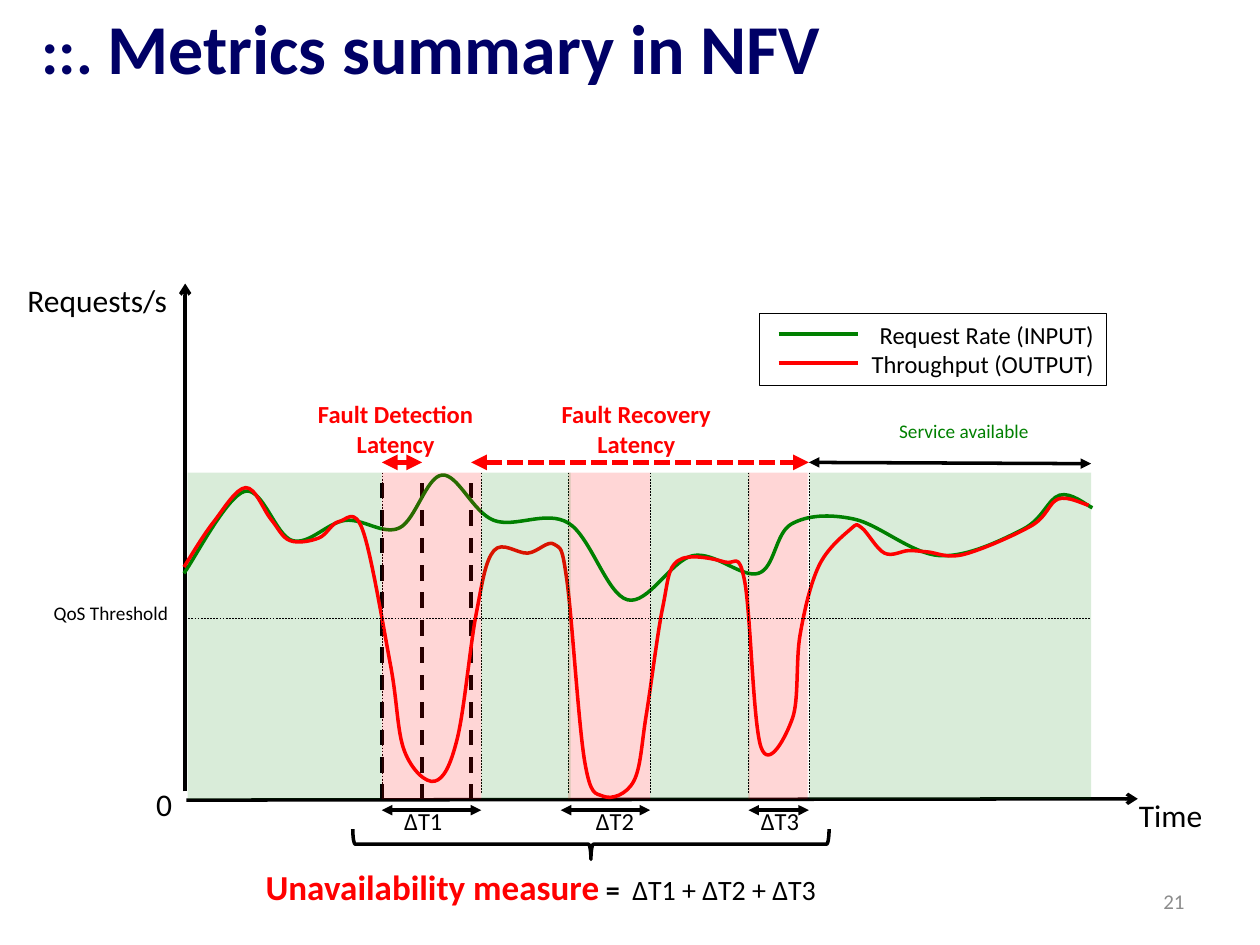
from dataclasses import dataclass
from typing import Optional

from lxml import etree
from pptx import Presentation
from pptx.dml.color import RGBColor
from pptx.enum.dml import MSO_LINE
from pptx.enum.shapes import MSO_CONNECTOR, MSO_SHAPE
from pptx.enum.text import MSO_ANCHOR, MSO_AUTO_SIZE, PP_ALIGN
from pptx.oxml.ns import qn
from pptx.util import Inches, Pt

BLACK = RGBColor(0x00, 0x00, 0x00)
RED = RGBColor(0xFF, 0x00, 0x00)
GREEN = RGBColor(0x00, 0x80, 0x00)
NAVY = RGBColor(0x00, 0x00, 0x66)
GREY = RGBColor(0x8C, 0x8C, 0x8C)
LEFT, MID, RIGHT = PP_ALIGN.LEFT, PP_ALIGN.CENTER, PP_ALIGN.RIGHT
TOP, CENTRE = MSO_ANCHOR.TOP, MSO_ANCHOR.MIDDLE
FIT, FIXED = MSO_AUTO_SIZE.SHAPE_TO_FIT_TEXT, MSO_AUTO_SIZE.NONE
DASH, BLOCK = MSO_LINE.DASH, MSO_LINE.SQUARE_DOT
STRAIGHT = MSO_CONNECTOR.STRAIGHT
RECT, BRACE = MSO_SHAPE.RECTANGLE, MSO_SHAPE.LEFT_BRACE
FONT = "Calibri"
BAND_TOP, BAND_TALL = 3.75, 2.59
SPAN_Y, DELTA_Y = 3.67, 6.43
UNIT = 1000


@dataclass
class Label:
    text: str
    x: float
    y: float
    w: float
    h: float
    size: float
    color: RGBColor = BLACK
    bold: bool = False
    align: PP_ALIGN = LEFT
    wrap: bool = True


@dataclass
class Rule:
    x1: float
    y1: float
    x2: float
    y2: float
    color: RGBColor = BLACK
    width: float = 2
    dash: Optional[MSO_LINE] = None
    head: str = ""
    tail: str = ""


@dataclass
class Band:
    left: float
    right: float
    color: RGBColor
    alpha: int


def style(run, size: float, color: RGBColor, bold: bool) -> None:
    run.font.name = FONT
    run.font.size = Pt(size)
    run.font.bold = bold
    run.font.color.rgb = color


def write(shapes, item: Label):
    box = shapes.add_textbox(*map(Inches, (item.x, item.y, item.w, item.h)))
    frame = box.text_frame
    frame.word_wrap = item.wrap
    frame.auto_size = FIT
    frame.text = item.text
    for para in frame.paragraphs:
        para.alignment = item.align
        for run in para.runs:
            style(run, item.size, item.color, item.bold)
    return box


def extend(para, text: str, size: float, color: RGBColor, bold: bool) -> None:
    run = para.add_run()
    run.text = text
    style(run, size, color, bold)


def rule(shapes, item: Rule) -> None:
    ends = map(Inches, (item.x1, item.y1, item.x2, item.y2))
    link = shapes.add_connector(STRAIGHT, *ends)
    link.line.color.rgb = item.color
    link.line.width = Pt(item.width)
    if item.dash is not None:
        link.line.dash_style = item.dash
    props = link._element.spPr
    line = props.find(qn("a:ln"))
    for tag, kind in (("a:headEnd", item.head), ("a:tailEnd", item.tail)):
        if kind:
            etree.SubElement(line, qn(tag), type=kind)
    etree.SubElement(props, qn("a:effectLst"))


def span(shapes, x1: float, x2: float, y: float, drop: float = 0, **look) -> None:
    rule(shapes, Rule(x1, y, x2, y + drop, head="triangle", tail="triangle", **look))


def shade(shapes, band: Band) -> None:
    area = (band.left, BAND_TOP, band.right - band.left, BAND_TALL)
    box = shapes.add_shape(RECT, *map(Inches, area))
    box.shadow.inherit = False
    box.line.fill.background()
    box.fill.solid()
    box.fill.fore_color.rgb = band.color
    tint = box._element.spPr.find(".//" + qn("a:srgbClr"))
    etree.SubElement(tint, qn("a:alpha"), val=str(band.alpha * 1000))


def curve(shapes, knots: list, color: RGBColor) -> None:
    dots = [(round(x * UNIT), round(y * UNIT)) for x, y in knots]
    pen = shapes.build_freeform(*dots[0], scale=Inches(1) / UNIT)
    pen.add_line_segments(dots[1:], close=False)
    shape = pen.convert_to_shape()
    shape.shadow.inherit = False
    shape.fill.background()
    shape.line.color.rgb = color
    shape.line.width = Pt(2)
    track = shape._element.spPr.find(".//" + qn("a:path"))
    pts = [(int(p.get("x")), int(p.get("y"))) for p in track.iter(qn("a:pt"))]
    pts = [pts[0], *pts, pts[-1]]
    for i, step in enumerate(track.findall(qn("a:lnTo")), 1):
        (ax, ay), (bx, by), (cx, cy), (dx, dy) = pts[i - 1:i + 3]
        bend = etree.Element(qn("a:cubicBezTo"))
        for x, y in (
            (bx + (cx - ax) / 6, by + (cy - ay) / 6),
            (cx - (dx - bx) / 6, cy - (dy - by) / 6),
            (cx, cy),
        ):
            etree.SubElement(bend, qn("a:pt"), x=str(round(x)), y=str(round(y)))
        track.replace(step, bend)


INPUT = [
    (1.46, 4.55), (1.94, 3.9), (2.32, 4.29), (2.74, 4.13), (3.17, 4.19),
    (3.51, 3.77), (3.92, 4.13), (4.51, 4.15), (4.98, 4.76), (5.5, 4.41),
    (6.02, 4.55), (6.28, 4.16), (6.78, 4.12), (7.46, 4.41), (8.12, 4.2),
    (8.41, 3.93), (8.67, 4.03),
]
OUTPUT = [
    (1.46, 4.5), (1.69, 4.15), (1.95, 3.87), (2.15, 4.12), (2.3, 4.29),
    (2.53, 4.27), (2.69, 4.14), (2.88, 4.21), (3.1, 5.28), (3.21, 5.96),
    (3.45, 6.2), (3.63, 5.86), (3.78, 4.87), (3.92, 4.37), (4.19, 4.39),
    (4.4, 4.32), (4.5, 4.61), (4.64, 6.04), (4.79, 6.32), (5.03, 6.2),
    (5.13, 5.67), (5.26, 4.82), (5.38, 4.45), (5.75, 4.46), (5.91, 4.61),
    (6.04, 5.93), (6.29, 5.7), (6.35, 5.04), (6.5, 4.49), (6.75, 4.2),
    (6.84, 4.19), (7.02, 4.39), (7.21, 4.37), (7.36, 4.38), (7.65, 4.4),
    (8.19, 4.17), (8.4, 3.96), (8.64, 4.01),
]
LABELS = [
    Label("0", 1.14, 6.18, 0.33, 0.4, 18, wrap=False),
    Label("QoS Threshold", 0.04, 4.72, 1.68, 0.29, 11, align=MID),
    Label("Time", 8.94, 6.27, 0.71, 0.4, 18, wrap=False),
    Label("Requests/s", 0.12, 2.18, 1.34, 0.4, 18, wrap=False),
    Label("Fault Detection\nLatency", 2.3, 3.12, 1.68, 0.57, 14, RED, True, MID),
    Label("Fault Recovery\nLatency", 4.21, 3.12, 1.68, 0.57, 14, RED, True, MID),
    Label("Service available", 6.81, 3.28, 1.68, 0.29, 11, GREEN, align=MID),
]
LABELS += [
    Label(f"ΔT{i}", x, 6.35, 0.52, 0.34, 14, wrap=False)
    for i, x in enumerate((3.11, 4.63, 5.94), 1)
]
BACK = [Band(a, b, GREEN, 15) for a, b in ((1.49, 3.03), (5.16, 5.95), (6.42, 8.66))]
BACK += [Band(a, b, RED, 16) for a, b in ((4.51, 5.16), (5.94, 6.41))]
FRONT = [Band(3.82, 4.53, GREEN, 15), Band(3.03, 3.82, RED, 16)]


def main() -> None:
    deck = Presentation()
    deck.slide_width, deck.slide_height = Inches(10), Inches(7.5)
    slide = deck.slides.add_slide(deck.slide_layouts[5])
    shapes = slide.shapes

    title = shapes.title
    title.left, title.top, title.width, title.height = map(Inches, (0.23, 0.05, 9.26, 0.64))
    title.text_frame.auto_size = FIXED
    title.text_frame.vertical_anchor = CENTRE
    para = title.text_frame.paragraphs[0]
    para.alignment = LEFT
    extend(para, "::. ", 36, NAVY, True)
    extend(para, "Metrics summary in NFV", 40, NAVY, True)

    page = write(shapes, Label("21", 7.17, 6.95, 2.33, 0.4, 12, GREY, align=RIGHT))
    page.text_frame.auto_size = FIXED
    page.text_frame.vertical_anchor = CENTRE
    total = write(shapes, Label("Unavailability measure", 2.01, 6.82, 5.75, 0.71, 20, RED, True))
    para = total.text_frame.paragraphs[0]
    extend(para, " =  ", 16, BLACK, True)
    extend(para, "ΔT1 + ΔT2 + ΔT3", 16, BLACK, False)
    for item in LABELS:
        write(shapes, item)

    names = "Request Rate (INPUT)\nThroughput (OUTPUT)"
    key = write(shapes, Label(names, 6.03, 2.49, 2.75, 0.57, 14, align=RIGHT))
    key.text_frame.vertical_anchor = TOP
    key.line.color.rgb = BLACK
    key.line.width = Pt(0.75)
    for y, color in ((2.65, GREEN), (2.88, RED)):
        rule(shapes, Rule(6.18, y, 6.81, y, color))

    rule(shapes, Rule(1.47, 6.28, 1.47, 2.25, tail="arrow"))
    rule(shapes, Rule(1.48, 6.35, 9.03, 6.34, tail="arrow"))
    for left, right in ((3.03, 3.35), (3.74, 6.42)):
        span(shapes, left, right, SPAN_Y, color=RED, width=3, dash=BLOCK)
    brace = shapes.add_shape(BRACE, *map(Inches, (4.57, 4.81, 0.24, 3.78)))
    brace.rotation = 270
    brace.shadow.inherit = False
    brace.fill.background()
    brace.line.color.rgb = BLACK
    brace.line.width = Pt(2)

    for band in BACK:
        shade(shapes, band)
    for x, top in ((3.35, 3.83), (3.74, BAND_TOP), (3.03, 3.83)):
        rule(shapes, Rule(x, 6.35, x, top, width=2.25, dash=DASH))
    for left, right in ((3.03, 3.82), (4.45, 5.16), (5.94, 6.42)):
        span(shapes, left, right, DELTA_Y)
    curve(shapes, INPUT, GREEN)
    curve(shapes, OUTPUT, RED)
    for x in (3.03, 3.82, 4.51, 5.16, 5.94, 6.42):
        rule(shapes, Rule(x, BAND_TOP, x, 6.3, width=0.25, dash=DASH))
    span(shapes, 6.42, 8.66, SPAN_Y, 0.01)
    for band in FRONT:
        shade(shapes, band)
    rule(shapes, Rule(1.47, 4.91, 8.66, 4.91, width=0.25, dash=DASH))
    deck.save("out.pptx")


if __name__ == "__main__":
    main()
